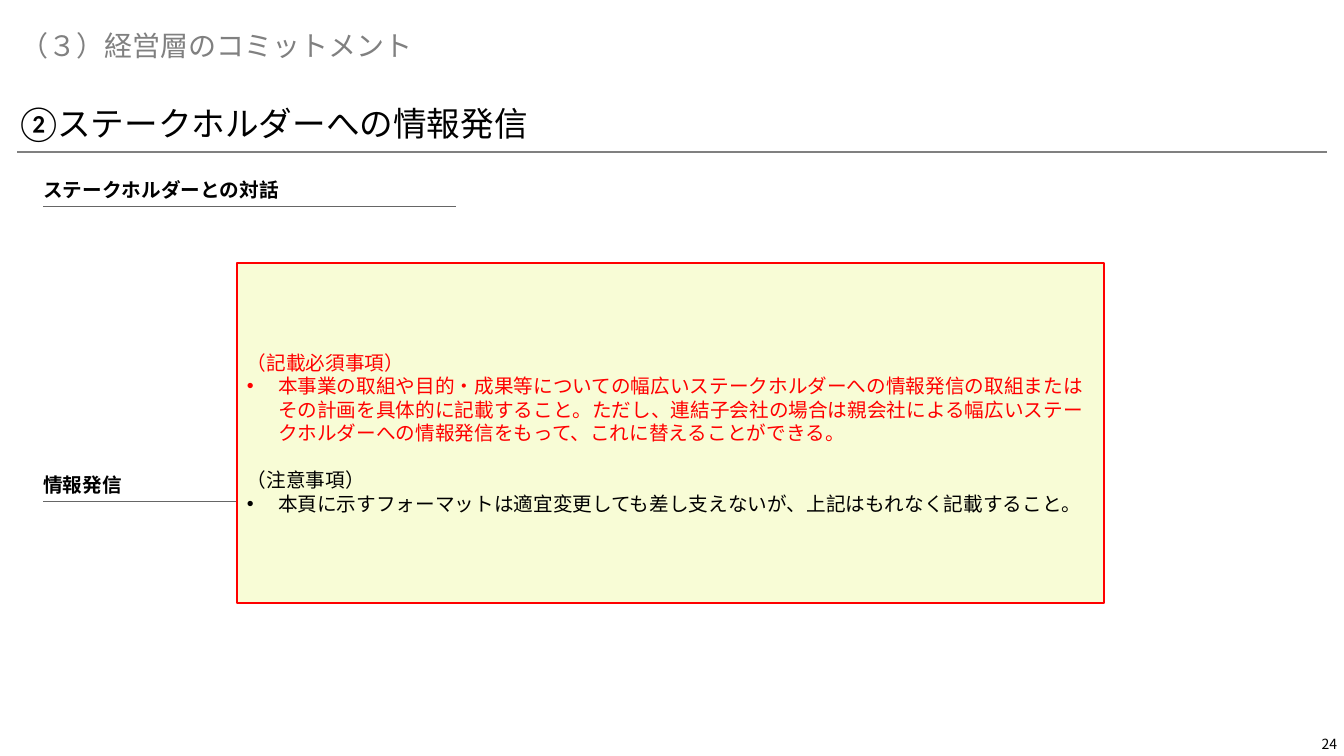
from dataclasses import dataclass

from lxml import etree
from pptx import Presentation
from pptx import util as u
from pptx.dml.color import RGBColor
from pptx.enum import shapes, text
from pptx.oxml.ns import qn

PX = 9144  # EMU per px, 100 px to the inch
BODY_FONT, HEADING_FONT = "Noto Sans CJK JP", "Lato"
BLACK, GRAY, DARK_GRAY, RED, CREAM = "000000", "808080", "666666", "FF0000", "F8FCD6"
TOP, MIDDLE, BOTTOM = text.MSO_ANCHOR.TOP, text.MSO_ANCHOR.MIDDLE, text.MSO_ANCHOR.BOTTOM
BULLET_INDENT = 31


@dataclass
class Label:
    words: str
    left: int
    top: int
    width: int
    height: int
    size: int
    color: str = BLACK
    font: str = BODY_FONT
    bold: bool = False
    anchor: text.MSO_ANCHOR = BOTTOM
    align: text.PP_ALIGN = text.PP_ALIGN.LEFT
    spacing: float = 1.0


@dataclass
class Rule:
    left: int
    right: int
    y: int
    color: str
    weight: float


@dataclass
class Note:
    words: str
    color: str
    bullet: bool = False
    gap_before: float = 0


def px(length: int) -> int:
    return u.Emu(length * PX)


def rgb(color: str) -> RGBColor:
    return RGBColor.from_string(color)


def set_font(paragraph, size: int, color: str, name: str = BODY_FONT, bold: bool = False) -> None:
    font = paragraph.font
    font.size, font.bold, font.name = u.Pt(size), bold, name
    font.color.rgb = rgb(color)
    # Japanese text takes its line height from the heading font
    properties = paragraph._p.pPr.find(qn("a:defRPr"))
    etree.SubElement(properties, qn("a:ea")).set("typeface", HEADING_FONT)


def add_label(slide, label: Label) -> None:
    box = slide.shapes.add_textbox(px(label.left), px(label.top), px(label.width), px(label.height))
    frame = box.text_frame
    frame.word_wrap = True
    frame.vertical_anchor = label.anchor
    frame.margin_left = frame.margin_right = frame.margin_top = frame.margin_bottom = 0
    paragraph = frame.paragraphs[0]
    paragraph.text = label.words
    paragraph.alignment = label.align
    paragraph.line_spacing = label.spacing
    set_font(paragraph, label.size, label.color, label.font, label.bold)


def add_rule(slide, rule: Rule) -> None:
    line = slide.shapes.add_connector(
        shapes.MSO_CONNECTOR.STRAIGHT, px(rule.left), px(rule.y), px(rule.right), px(rule.y))
    line.line.color.rgb = rgb(rule.color)
    line.line.width = u.Pt(rule.weight)
    etree.SubElement(line._element.spPr, qn("a:effectLst"))


def add_bullet(paragraph) -> None:
    properties = paragraph._p.get_or_add_pPr()
    properties.set("marL", str(px(BULLET_INDENT)))
    properties.set("indent", str(px(-BULLET_INDENT)))
    etree.SubElement(properties, qn("a:buFont")).set("typeface", "Arial")
    etree.SubElement(properties, qn("a:buChar")).set("char", "•")


def add_notes_box(slide, notes: list[Note]) -> None:
    box = slide.shapes.add_shape(
        shapes.MSO_SHAPE.RECTANGLE, px(235), px(261), px(860), px(337))
    box.shadow.inherit = False
    box.fill.solid()
    box.fill.fore_color.rgb = rgb(CREAM)
    box.line.color.rgb = rgb(RED)
    box.line.width = u.Pt(1.5)
    frame = box.text_frame
    frame.word_wrap = True
    frame.vertical_anchor = MIDDLE
    for index, note in enumerate(notes):
        paragraph = frame.add_paragraph() if index else frame.paragraphs[0]
        paragraph.text = note.words
        paragraph.alignment = text.PP_ALIGN.LEFT
        if note.gap_before:
            paragraph.space_before = u.Pt(note.gap_before)
        if note.bullet:
            add_bullet(paragraph)
        set_font(paragraph, 14, note.color)


LABELS = [
    Label("24", 1284, 729, 42, 17, 10, align=text.PP_ALIGN.RIGHT),
    Label("（３）経営層のコミットメント", 20, 32, 1181, 30, 20, GRAY, anchor=TOP, spacing=0.9),
    Label("②ステークホルダーへの情報発信", 20, 107, 1230, 36, 24, spacing=0.9),
]
SECTIONS = {"ステークホルダーとの対話": 170, "情報発信": 463}
NOTES = [
    Note("（記載必須事項）", RED),
    Note("本事業の取組や目的・成果等についての幅広いステークホルダーへの情報発信の取組または"
         "その計画を具体的に記載すること。ただし、連結子会社の場合は親会社による幅広い"
         "ステークホルダーへの情報発信をもって、これに替えることができる。", RED, bullet=True),
    Note("（注意事項）", BLACK, gap_before=16.8),
    Note("本頁に示すフォーマットは適宜変更しても差し支えないが、上記はもれなく記載すること。",
         BLACK, bullet=True),
]


def main() -> None:
    presentation = Presentation()
    presentation.slide_width, presentation.slide_height = px(1333), px(750)
    slide = presentation.slides.add_slide(presentation.slide_layouts[6])

    # Page number, chapter and title
    for label in LABELS:
        add_label(slide, label)
    add_rule(slide, Rule(17, 1316, 151, GRAY, 1))

    # Underlined section headings
    for words, top in SECTIONS.items():
        add_label(slide, Label(words, 43, top, 408, 30, 14, font=HEADING_FONT, bold=True))
        add_rule(slide, Rule(43, 452, top + 35, DARK_GRAY, 0.75))

    # Instructions over the sections
    add_notes_box(slide, NOTES)
    presentation.save("out.pptx")


if __name__ == "__main__":
    main()
